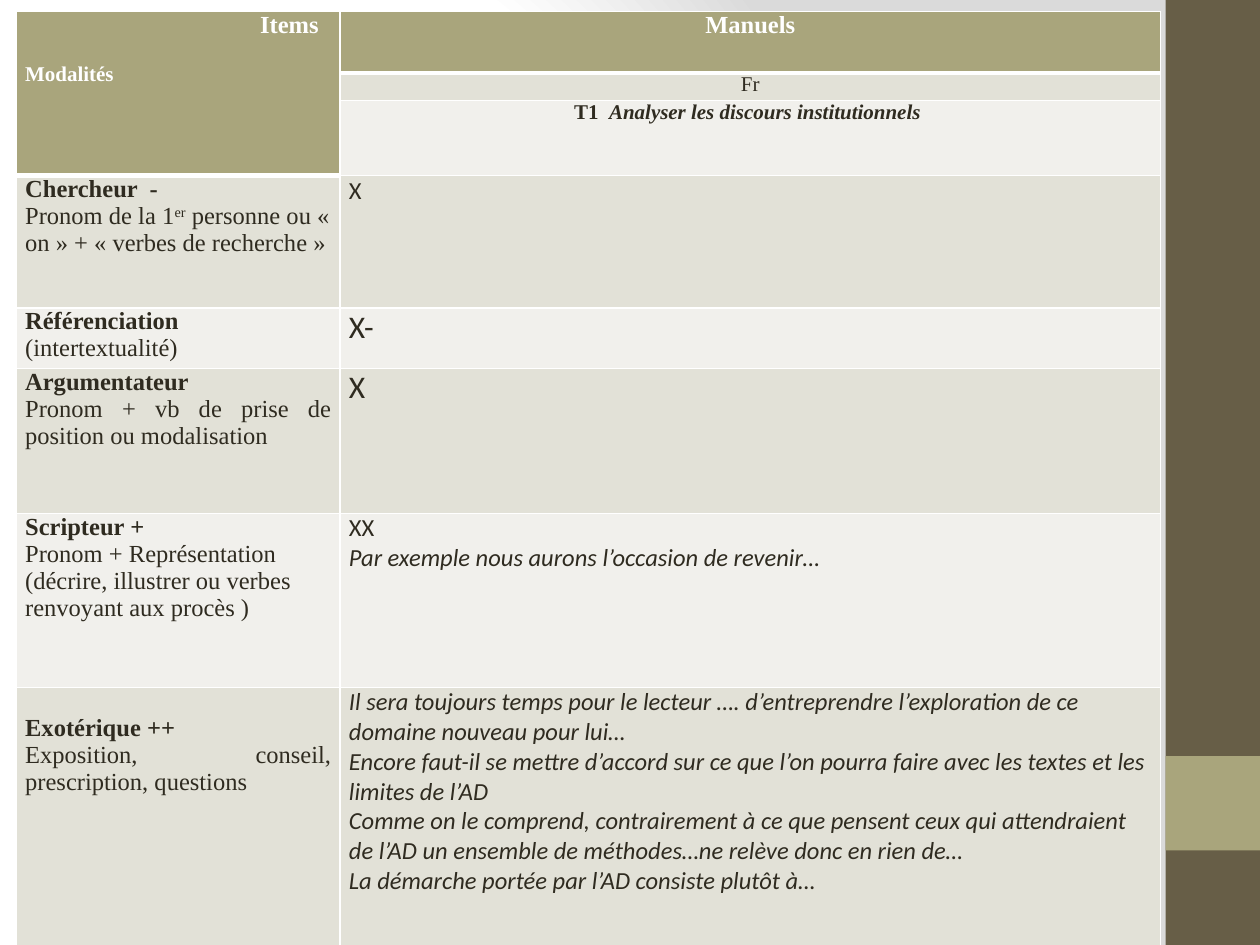
import pptx
import pptx.util
import pptx.oxml
import pptx.oxml.ns
from pptx.dml.color import RGBColor
from pptx.enum.shapes import MSO_SHAPE
from pptx.enum.text import PP_ALIGN
from pptx.util import Inches, Pt

HUES = {"brown": "675E47", "olive": "A9A57C", "dark": "E2E1D7",
        "light": "F1F0EC", "ink": "2F2B20", "white": "FFFFFF", "gray": "DADADA"}
TIMES, SANS = "Times New Roman", "Calibri"
LEFT, RIGHT = PP_ALIGN.LEFT, PP_ALIGN.RIGHT
MID, JUST = PP_ALIGN.CENTER, PP_ALIGN.JUSTIFY
COLS = [2.57, 6.51]
ROWS = [0.49, 0.22, 0.59, 1.05, 0.48, 1.15, 1.38, 2.31]

MODES = [
    [(JUST, [("Chercheur  -", "b")]),
     (LEFT, [("Pronom de la 1", ""), ("er", "^"),
             (" personne ou « on » + « verbes de recherche »", "")])],
    [(LEFT, [("Référenciation ", "b"), ("(intertextualité)", "")])],
    [(JUST, [("Argumentateur ", "b")]),
     (JUST, [("Pronom + vb de prise de position ou modalisation", "")])],
    [(JUST, [("Scripteur +", "b")]),
     (LEFT, [("Pronom + Représentation", "")]),
     (LEFT, [("(décrire, illustrer ou verbes renvoyant aux procès )", "")])],
    [(JUST, [("Exotérique ++", "b")]),
     (JUST, [("Exposition, conseil, prescription, questions", "")])],
]
NOTES = [
    (14, [("X", "")]),
    (18, [("X-", "")]),
    (18, [("X", "")]),
    (14, [("XX", ""), ("Par exemple nous aurons l’occasion de revenir…", "i")]),
    (14, [("Il sera toujours temps pour le lecteur …. d’entreprendre l’exploration "
           "de ce domaine nouveau pour lui…", "i"),
          ("Encore faut-il se mettre d’accord sur ce que l’on pourra faire avec "
           "les textes et les limites de l’AD", "i"),
          ("Comme on le comprend, contrairement à ce que pensent ceux qui "
           "attendraient de l’AD un ensemble de méthodes…ne relève donc en rien de…", "i"),
          ("La démarche portée par l’AD consiste plutôt à…", "i")]),
]


def color(name):
    return RGBColor.from_string(HUES[name])


def paint_back(slide):
    stops = "".join(
        f'<a:gs pos="{pos}"><a:srgbClr val="{HUES[hue]}"/></a:gs>'
        for pos, hue in [(0, "white"), (75000, "white"), (100000, "gray")])
    back = pptx.oxml.parse_xml(
        f'<p:bg {pptx.oxml.ns.nsdecls("p", "a")}><p:bgPr><a:gradFill>'
        f'<a:gsLst>{stops}</a:gsLst><a:path path="circle">'
        '<a:fillToRect l="20000" t="50000" r="100000" b="50000"/></a:path>'
        '</a:gradFill><a:effectLst/></p:bgPr></p:bg>')
    slide.element[0].insert(0, back)


def add_bar(slide, top, height, hue):
    bar = slide.shapes.add_shape(MSO_SHAPE.RECTANGLE, Inches(9.25), Inches(top),
                                 Inches(0.75), Inches(height))
    bar.shadow.inherit = False
    bar.fill.solid()
    bar.fill.fore_color.rgb = color(hue)
    bar.line.fill.background()


def add_edges(cell, top, bottom):
    props = cell._tc.get_or_add_tcPr()
    for spot, (side, width) in enumerate(
            [("L", 1), ("R", 1), ("T", top), ("B", bottom)]):
        props.insert(spot, pptx.oxml.parse_xml(
            f'<a:ln{side} {pptx.oxml.ns.nsdecls("a")} w="{Pt(width)}"><a:solidFill>'
            f'<a:srgbClr val="{HUES["white"]}"/></a:solidFill></a:ln{side}>'))


def add_para(cell, first, align, runs, size, face, hue):
    para = cell.text_frame.paragraphs[0] if first else cell.text_frame.add_paragraph()
    para.alignment = align
    para.font.size = Pt(size)
    para.font.name = face
    para.font.color.rgb = color(hue)
    for text, style in runs:
        run = para.add_run()
        run.text = text
        run.font.bold = "b" in style
        run.font.italic = "i" in style
        if "^" in style:
            run._r.get_or_add_rPr().set("baseline", "30000")
    return para


def fill_cell(cell, paras, size=14, face=TIMES, hue="ink"):
    for spot, (align, runs) in enumerate(paras):
        add_para(cell, spot == 0, align, runs, size, face, hue)


def add_grid(slide):
    frame = slide.shapes.add_table(len(ROWS), len(COLS), Inches(0.13), Inches(0.09),
                                   Inches(sum(COLS)), Inches(sum(ROWS)))
    grid = frame.table
    grid.first_row = grid.horz_banding = False
    for col, width in zip(grid.columns, COLS):
        col.width = Inches(width)
    for row, height in zip(grid.rows, ROWS):
        row.height = Inches(height)
    for i in range(len(ROWS)):
        for j in range(len(COLS)):
            cell = grid.cell(i, j)
            last = 0 if j else 2
            cell.margin_left = cell.margin_right = Inches(0.07)
            cell.margin_top = cell.margin_bottom = 0
            cell.fill.solid()
            cell.fill.fore_color.rgb = color(
                "olive" if i <= last else "dark" if i % 2 else "light")
            add_edges(cell, 3 if i == last + 1 else 1, 3 if i == last else 1)
    grid.cell(0, 0).merge(grid.cell(2, 0))
    return grid


def fill_head(grid):
    corner = grid.cell(0, 0)
    corner.margin_right = Inches(0.17)
    add_para(corner, True, RIGHT, [("Items", "b")], 14, TIMES, "white")
    mode = add_para(corner, False, LEFT, [("Modalités", "b")], 12, TIMES, "white")
    mode.space_before = Pt(14)
    fill_cell(grid.cell(0, 1), [(MID, [("Manuels", "b")])], hue="white")
    fill_cell(grid.cell(1, 1), [(MID, [("Fr", "")])], 12)
    fill_cell(grid.cell(2, 1), [(MID, [
        ("T1  ", "b"), ("Analyser les discours institutionnels ", "bi")])], 12)


def fill_body(grid):
    for i, (mode, (size, lines)) in enumerate(zip(MODES, NOTES), 3):
        fill_cell(grid.cell(i, 0), mode)
        fill_cell(grid.cell(i, 1), [(LEFT, [line]) for line in lines], size, SANS)
    grid.cell(len(ROWS) - 1, 0).margin_top = Inches(0.22)


def main():
    deck = pptx.Presentation()
    deck.slide_width, deck.slide_height = Inches(10), Inches(7.5)
    slide = deck.slides.add_slide(deck.slide_layouts[6])
    paint_back(slide)
    add_bar(slide, 0, 7.5, "brown")
    add_bar(slide, 6, 0.75, "olive")
    grid = add_grid(slide)
    fill_head(grid)
    fill_body(grid)
    deck.save("out.pptx")


if __name__ == "__main__":
    main()
